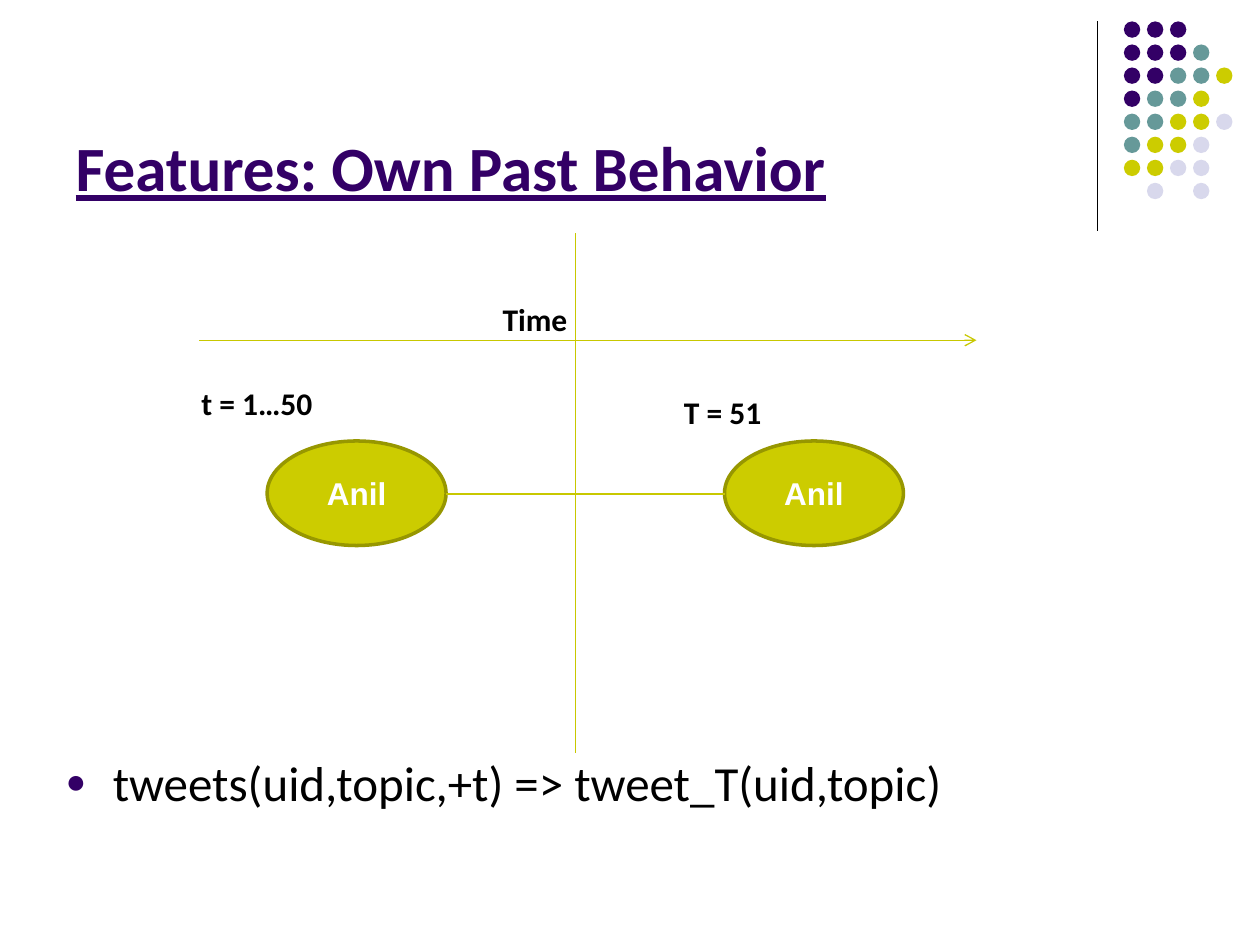
from lxml import etree
from pptx import Presentation
from pptx.dml.color import RGBColor
from pptx.enum.shapes import MSO_CONNECTOR, MSO_SHAPE
from pptx.enum.text import MSO_ANCHOR, PP_ALIGN
from pptx.oxml.ns import qn
from pptx.util import Inches, Pt

PURPLE, TEAL, LIME, LILAC = "330066", "669999", "CCCC00", "D8D8EC"
LINE_LIME = "C8C800"


def style_text(frame, text, size, color, font="Calibri", bold=False):
    frame.text = text
    run = frame.paragraphs[0].runs[0]
    run.font.name, run.font.size, run.font.bold = font, Pt(size), bold
    run.font.color.rgb = RGBColor.from_string(color)
    return run


def add_line(x1, y1, x2, y2, color):
    line = slide.shapes.add_connector(
        MSO_CONNECTOR.STRAIGHT, Inches(x1), Inches(y1), Inches(x2), Inches(y2))
    line.line.color.rgb = RGBColor.from_string(color)
    line.line.width = Pt(0.75)
    etree.SubElement(line._element.spPr, qn("a:effectLst"))
    return line


prs = Presentation()
prs.slide_width, prs.slide_height = Inches(10), Inches(7.5)
slide = prs.slides.add_slide(prs.slide_layouts[1])

# Corner decoration: a rule and a grid of dots
add_line(8.71, 0.17, 8.71, 1.83, "000000")
dot_colors = {"P": PURPLE, "T": TEAL, "L": LIME, "V": LILAC}
dot_rows = ["PPP", "PPPT", "PPTTL", "PTTL", "TTLLV", "TLLV", "LLVV", " V V"]
dots = slide.shapes.add_group_shape()
for row, pattern in enumerate(dot_rows):
    for column, key in enumerate(pattern):
        if key == " ":
            continue
        dot = dots.shapes.add_shape(
            MSO_SHAPE.OVAL, Inches(8.92 + 0.183 * column),
            Inches(0.17 + 0.183 * row), Inches(0.13), Inches(0.13))
        dot.fill.solid()
        dot.fill.fore_color.rgb = RGBColor.from_string(dot_colors[key])
        dot.line.fill.background()
        dot.shadow.inherit = False

# Title and rule
title = slide.shapes.title
title.left, title.top, title.width, title.height = map(Inches, (0.5, 0.3, 9, 1.37))
heading = style_text(title.text_frame, "Features: Own Past Behavior", 36, PURPLE, bold=True)
heading.font.underline = True
title.text_frame.vertical_anchor = MSO_ANCHOR.BOTTOM
title.text_frame.paragraphs[0].alignment = PP_ALIGN.LEFT

rule = slide.placeholders[1]
rule.left, rule.top, rule.width, rule.height = map(Inches, (0.42, 5.92, 9, 0.92))
style_text(rule.text_frame, "tweets(uid,topic,+t) => tweet_T(uid,topic)", 28, "000000")
bullet = rule.text_frame.paragraphs[0]._p.get_or_add_pPr()
bullet_color = etree.SubElement(bullet, qn("a:buClr"))
etree.SubElement(bullet_color, qn("a:srgbClr"), val=PURPLE)
etree.SubElement(bullet, qn("a:buSzPct"), val="70000")
etree.SubElement(bullet, qn("a:buFont"), typeface="Arial")
etree.SubElement(bullet, qn("a:buChar"), char="●")

# Past and present user, divided by a vertical line
add_line(4.57, 1.85, 4.57, 5.98, LINE_LIME)
for left in (2.12, 5.75):
    user = slide.shapes.add_shape(
        MSO_SHAPE.OVAL, Inches(left), Inches(3.5), Inches(1.42), Inches(0.83))
    user.fill.solid()
    user.fill.fore_color.rgb = RGBColor.from_string(LIME)
    user.line.color.rgb = RGBColor.from_string("979700")
    user.line.width = Pt(2)
    user.shadow.inherit = False
    style_text(user.text_frame, "Anil", 18, "FFFFFF", "Arial", bold=True)
    user.text_frame.vertical_anchor = MSO_ANCHOR.MIDDLE
    user.text_frame.paragraphs[0].alignment = PP_ALIGN.CENTER
add_line(3.54, 3.92, 5.75, 3.92, LINE_LIME)

# Time axis and its labels
time_axis = add_line(1.58, 2.7, 7.75, 2.7, LINE_LIME)
etree.SubElement(time_axis.line._get_or_add_ln(), qn("a:tailEnd"), type="arrow")
time_labels = [
    ("T = 51", 5.33, 3.07, 2.42),
    ("t = 1…50", 1.5, 3, 3.17),
    ("Time", 3.89, 2.33, 0.92),
]
for text, left, top, width in time_labels:
    label = slide.shapes.add_textbox(Inches(left), Inches(top), Inches(width), Inches(0.4))
    label.text_frame.word_wrap = True
    style_text(label.text_frame, text, 18, "000000", bold=True)

prs.save("out.pptx")
